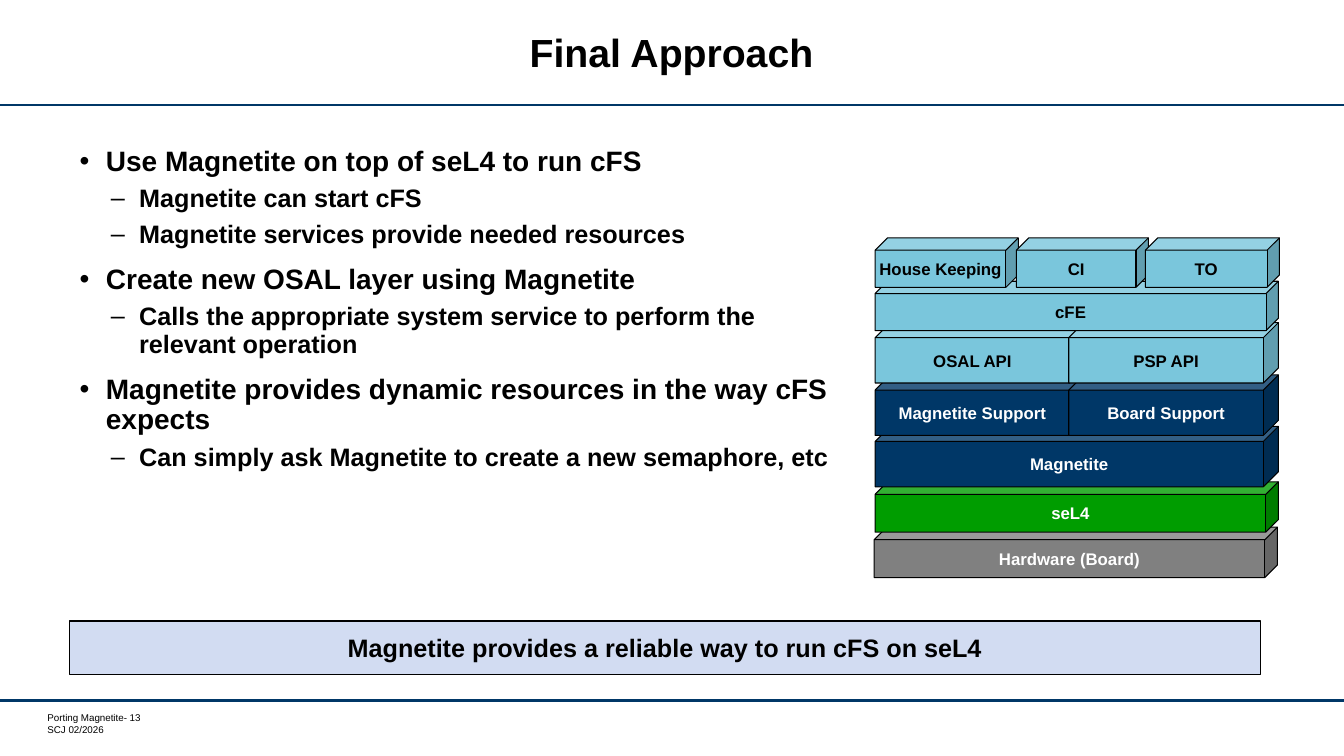
from lxml import etree
from pptx import Presentation
from pptx.dml.color import RGBColor
from pptx.enum.shapes import MSO_CONNECTOR, MSO_SHAPE
from pptx.enum.text import MSO_ANCHOR, MSO_AUTO_SIZE, PP_ALIGN
from pptx.oxml.ns import qn
from pptx.util import Pt

PX = 9144  # EMU per px, 100 px to the inch
SLIDE_WIDTH, SLIDE_HEIGHT = 1333, 750
FONT = "Arial"

BLACK = RGBColor(0x00, 0x00, 0x00)
WHITE = RGBColor(0xFF, 0xFF, 0xFF)
NAVY = RGBColor(0x00, 0x37, 0x67)
SKY = RGBColor(0x7A, 0xC6, 0xDC)
GREEN = RGBColor(0x00, 0x9D, 0x00)
GRAY = RGBColor(0x80, 0x80, 0x80)
PALE_BLUE = RGBColor(0xD2, 0xDC, 0xF2)

CENTER, LEFT = PP_ALIGN.CENTER, PP_ALIGN.LEFT
MIDDLE, TOP = MSO_ANCHOR.MIDDLE, MSO_ANCHOR.TOP
CUBE, RECTANGLE = MSO_SHAPE.CUBE, MSO_SHAPE.RECTANGLE
STRAIGHT = MSO_CONNECTOR.STRAIGHT
NO_AUTOFIT = MSO_AUTO_SIZE.NONE

# Per level: bullet, left margin, hanging indent, size, space before
LEVELS = [("•", 26, 26, 20, 12), ("–", 59, 28, 18, 6)]
BULLETS = [
    (0, "Use Magnetite on top of seL4 to run cFS"),
    (1, "Magnetite can start cFS"),
    (1, "Magnetite services provide needed resources"),
    (0, "Create new OSAL layer using Magnetite"),
    (1, "Calls the appropriate system service to perform the relevant operation"),
    (0, "Magnetite provides dynamic resources in the way cFS expects"),
    (1, "Can simply ask Magnetite to create a new semaphore, etc"),
]

# Bottom to top: offset from stack top, height, fill, text colour,
# then (offset from stack left, width, label) of each block
STACK = [
    (287, 50, GRAY, WHITE, [(-1, 400, "Hardware (Board)")]),
    (242, 50, GREEN, WHITE, [(0, 400, "seL4")]),
    (187, 60, NAVY, WHITE, [(0, 400, "Magnetite")]),
    (136, 60, NAVY, WHITE, [(0, 208, "Magnetite Support"), (192, 208, "Board Support")]),
    (84, 60, SKY, BLACK, [(0, 208, "OSAL API"), (192, 208, "PSP API")]),
    (43, 49, SKY, BLACK, [(0, 400, "cFE")]),
    (0, 49, SKY, BLACK, [(0, 142, "House Keeping"), (140, 131, "CI"), (268, 133, "TO")]),
]


def place(shape, left, top, width, height):
    shape.left, shape.top = left * PX, top * PX
    shape.width, shape.height = width * PX, height * PX


def style(paragraph, size, color=BLACK, bold=True, align=CENTER):
    paragraph.alignment = align
    font = paragraph.font
    font.name, font.size, font.bold = FONT, Pt(size), bold
    font.color.rgb = color


def add_block(slide, kind, box, text, fill, color, size, line_width, wrap):
    left, top, width, height = box
    shape = slide.shapes.add_shape(kind, left * PX, top * PX, width * PX, height * PX)
    shape.shadow.inherit = False
    shape.fill.solid()
    shape.fill.fore_color.rgb = fill
    shape.line.color.rgb = BLACK
    shape.line.width = Pt(line_width)
    frame = shape.text_frame
    frame.text = text
    frame.word_wrap = wrap
    frame.vertical_anchor = MIDDLE
    style(frame.paragraphs[0], size, color)


def add_rule(slide, top):
    rule = slide.shapes.add_connector(STRAIGHT, 0, top * PX, SLIDE_WIDTH * PX, top * PX)
    rule.line.color.rgb = NAVY
    rule.line.width = Pt(1.75)
    etree.SubElement(rule._element.spPr, qn("a:effectLst"))


def add_footer(slide, left, top, width, height):
    box = slide.shapes.add_textbox(left * PX, top * PX, width * PX, height * PX)
    frame = box.text_frame
    frame.word_wrap = True
    frame.margin_left = frame.margin_right = frame.margin_top = frame.margin_bottom = 0
    frame.text = "Porting Magnetite- 13\nSCJ 02/2026"
    for paragraph in frame.paragraphs:
        style(paragraph, 7, bold=False, align=LEFT)


def fill_title(title, left, top, width, height):
    place(title, left, top, width, height)
    frame = title.text_frame
    frame.text = "Final Approach"
    frame.auto_size = NO_AUTOFIT
    frame.vertical_anchor = MIDDLE
    paragraph = frame.paragraphs[0]
    paragraph.line_spacing = Pt(28)
    style(paragraph, 28)


def fill_body(body, left, top, width, height):
    place(body, left, top, width, height)
    frame = body.text_frame
    frame.text = "\n".join(text for _, text in BULLETS)
    frame.auto_size = NO_AUTOFIT
    frame.vertical_anchor = TOP
    for index, (level, _) in enumerate(BULLETS):
        paragraph = frame.paragraphs[index]
        bullet, margin, hanging, size, space = LEVELS[level]
        paragraph.level = level
        properties = paragraph._p.get_or_add_pPr()
        properties.set("marL", str(margin * PX))
        properties.set("indent", str(-hanging * PX))
        etree.SubElement(properties, qn("a:buChar"), char=bullet)
        paragraph.line_spacing = 0.9
        paragraph.space_before = Pt(space if index else 0)
        style(paragraph, size, align=LEFT)


def add_stack(slide, left, top):
    for row_top, height, fill, color, blocks in STACK:
        for offset, width, label in blocks:
            box = (left + offset, top + row_top, width, height)
            add_block(slide, CUBE, box, label, fill, color, 12, 0.75, False)


def main():
    presentation = Presentation()
    presentation.slide_width = SLIDE_WIDTH * PX
    presentation.slide_height = SLIDE_HEIGHT * PX
    slide = presentation.slides.add_slide(presentation.slide_layouts[1])

    # Frame of the page
    add_rule(slide, 104)
    add_rule(slide, 695)
    add_footer(slide, 47, 706, 159, 24)

    # Title and list
    fill_title(slide.shapes.title, 137, 11, 1058, 89)
    fill_body(slide.placeholders[1], 69, 141, 769, 456)

    # Software stack and takeaway
    add_stack(slide, 868, 236)
    add_block(slide, RECTANGLE, (69, 616, 1181, 53),
              "Magnetite provides a reliable way to run cFS on seL4",
              PALE_BLUE, BLACK, 18, 1, True)

    presentation.save("out.pptx")


if __name__ == "__main__":
    main()
